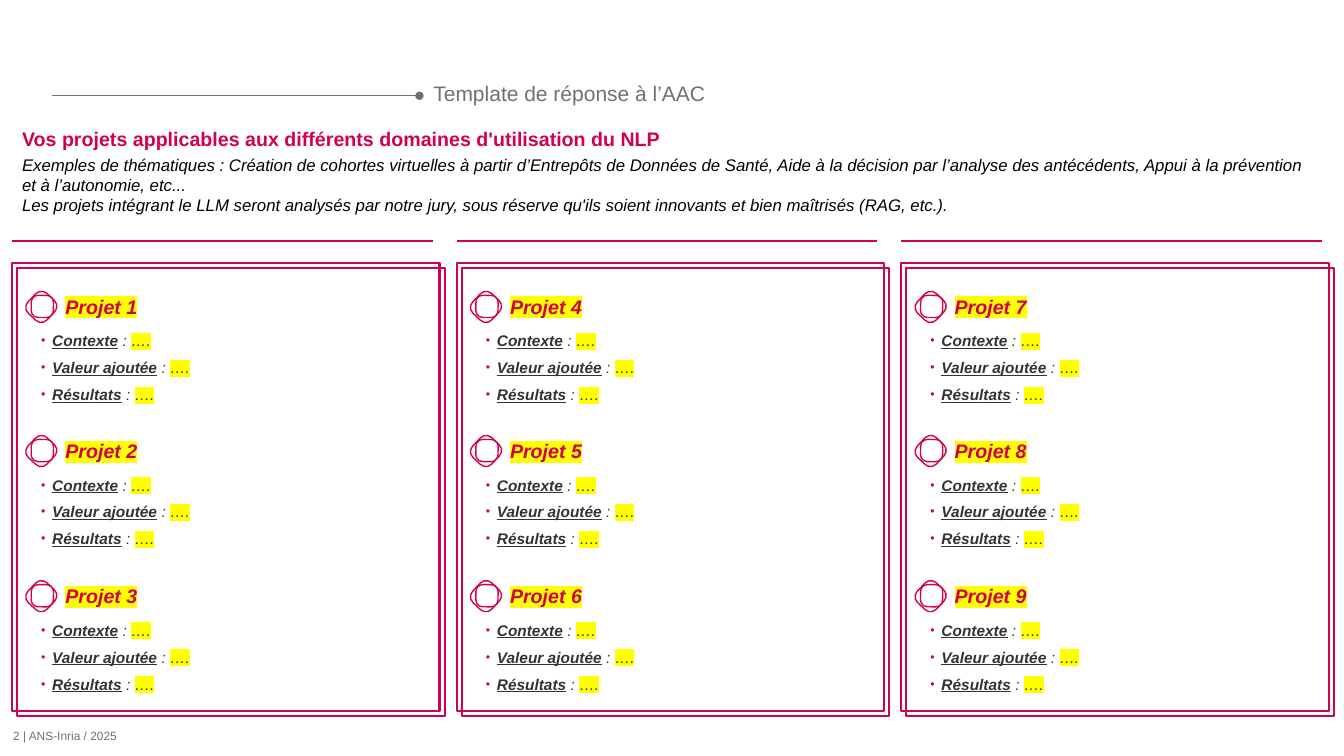
from lxml.etree import SubElement
from pptx import Presentation
from pptx.dml.color import RGBColor
from pptx.enum.shapes import MSO_CONNECTOR as Connector, MSO_SHAPE as Preset
from pptx.enum.text import MSO_ANCHOR as Anchor, PP_ALIGN as Align
from pptx.oxml import parse_xml
from pptx.oxml.ns import nsdecls, qn
from pptx.util import Inches, Pt

COLORS = {"pink": "D20050", "grey": "6F7072", "dark": "333333",
          "black": "000000", "yellow": "FFFF00"}
FONT = "Arial"
COLUMN_LEFT, COLUMN_STEP = 0.12, 4.41
PROJECT_TOPS = (2.86, 4.29, 5.73)
TOPICS = ("Contexte", "Valeur ajoutée", "Résultats")
INTRO = (
    "Exemples de thématiques : Création de cohortes virtuelles à partir "
    "d’Entrepôts de Données de Santé, Aide à la décision par l’analyse des "
    "antécédents, Appui à la prévention et à l’autonomie, etc...",
    "Les projets intégrant le LLM seront analysés par notre jury, sous réserve "
    "qu'ils soient innovants et bien maîtrisés (RAG, etc.).",
)


def rgb(color):
    return RGBColor.from_string(COLORS[color])


def write(paragraph, text, size, color, bold=False, italic=False,
          underline=False, highlight=None):
    run = paragraph.add_run()
    run.text = text
    font = run.font
    font.name, font.size = FONT, Pt(size)
    font.bold, font.italic, font.underline = bold, italic, underline
    font.color.rgb = rgb(color)
    if highlight:
        fill = run._r.get_or_add_rPr().find(qn("a:solidFill"))
        fill.addnext(parse_xml(
            f'<a:highlight {nsdecls("a")}>'
            f'<a:srgbClr val="{COLORS[highlight]}"/></a:highlight>'))


def text_frame(shapes, left, top, width, height, anchor=Anchor.TOP):
    frame = shapes.add_textbox(Inches(left), Inches(top),
                               Inches(width), Inches(height)).text_frame
    frame.word_wrap = True
    frame.vertical_anchor = anchor
    return frame


def outline(shapes, preset, left, top, width, height, weight, rotation=0):
    shape = shapes.add_shape(preset, Inches(left), Inches(top),
                             Inches(width), Inches(height))
    shape.shadow.inherit = False
    shape.fill.background()
    shape.line.color.rgb = rgb("pink")
    shape.line.width = Pt(weight)
    shape.rotation = rotation
    if preset == Preset.ROUNDED_RECTANGLE:
        shape.adjustments[0] = 0.305


def rule(shapes, left, right, y, color, weight, dot=False):
    line = shapes.add_connector(Connector.STRAIGHT, Inches(left), Inches(y),
                                Inches(right), Inches(y))
    line.line.color.rgb = rgb(color)
    line.line.width = Pt(weight)
    if dot:
        SubElement(line.line._get_or_add_ln(), qn("a:tailEnd"), type="oval")
    SubElement(line._element.spPr, qn("a:effectLst"))


def set_indent(paragraph, inches):
    properties = paragraph._p.get_or_add_pPr()
    properties.set("marL", str(Inches(inches)))
    properties.set("indent", str(-Inches(inches)))
    return properties


def add_bullet(paragraph):
    properties = set_indent(paragraph, 0.11)
    color = SubElement(properties, qn("a:buClr"))
    SubElement(color, qn("a:srgbClr"), val=COLORS["pink"])
    SubElement(properties, qn("a:buSzPct"), val="80000")
    SubElement(properties, qn("a:buFont"), typeface=FONT)
    SubElement(properties, qn("a:buChar"), char="•")


def header(shapes):
    rule(shapes, 0.52, 4.16, 0.95, "grey", 0.75, dot=True)
    heading = text_frame(shapes, 4.2, 0.78, 7.7, 0.33).paragraphs[0]
    set_indent(heading, 0.25)
    heading.line_spacing = 0.9
    write(heading, "Template de réponse à l’AAC", 15, "grey")


def introduction(shapes):
    frame = text_frame(shapes, 0.12, 1.21, 12.99, 0.98)
    write(frame.paragraphs[0],
          "Vos projets applicables aux différents domaines d'utilisation du NLP",
          14, "pink", bold=True)
    details = frame.add_paragraph()
    details.space_before = Pt(3)
    examples, conditions = INTRO
    write(details, examples, 12, "black", italic=True)
    details.add_line_break()
    write(details, conditions, 12, "black", italic=True)


def footer(shapes):
    frame = text_frame(shapes, 0.13, 7.22, 7.21, 0.14)
    frame.margin_left = frame.margin_right = 0
    frame.margin_top = frame.margin_bottom = 0
    frame.paragraphs[0].line_spacing = Pt(11)
    write(frame.paragraphs[0], "2 | ANS-Inria / 2025", 8.5, "grey")


def project(shapes, number, left, top):
    group = shapes.add_group_shape().shapes
    outline(group, Preset.ROUNDED_RECTANGLE, left + 0.16, top + 0.05,
            0.26, 0.27, 1, rotation=43.3)
    outline(group, Preset.ROUNDED_RECTANGLE, left + 0.19, top + 0.07,
            0.22, 0.22, 1, rotation=91)
    title = text_frame(group, left + 0.43, top, 2.85, 0.36, Anchor.MIDDLE).paragraphs[0]
    title.space_after = Pt(6)
    write(title, f"Projet {number}", 14, "pink", bold=True, italic=True,
          highlight="yellow")
    frame = text_frame(group, left + 0.19, top + 0.38, 3.94, 0.94)
    for index, topic in enumerate(TOPICS):
        item = frame.add_paragraph() if index else frame.paragraphs[0]
        item.alignment = Align.JUSTIFY
        item.space_after = Pt(6)
        add_bullet(item)
        write(item, topic, 11, "dark", bold=True, italic=True, underline=True)
        write(item, " : ", 11, "dark", italic=True)
        write(item, "….", 11, "dark", italic=True, highlight="yellow")


def project_column(shapes, column):
    left = COLUMN_LEFT + column * COLUMN_STEP
    rule(shapes, left, left + 4.17, 2.39, "pink", 1.5)
    frames = shapes.add_group_shape().shapes
    for offset in (0.05, 0):
        outline(frames, Preset.RECTANGLE, left + offset, 2.61 + offset,
                4.24, 4.44, 1.5)
    for row, top in enumerate(PROJECT_TOPS):
        project(shapes, column * len(PROJECT_TOPS) + row + 1, left, top)


def main():
    presentation = Presentation()
    presentation.slide_width = Inches(13.33)
    presentation.slide_height = Inches(7.5)
    shapes = presentation.slides.add_slide(presentation.slide_layouts[6]).shapes
    footer(shapes)
    header(shapes)
    introduction(shapes)
    for column in range(3):
        project_column(shapes, column)
    presentation.save("out.pptx")


if __name__ == "__main__":
    main()
